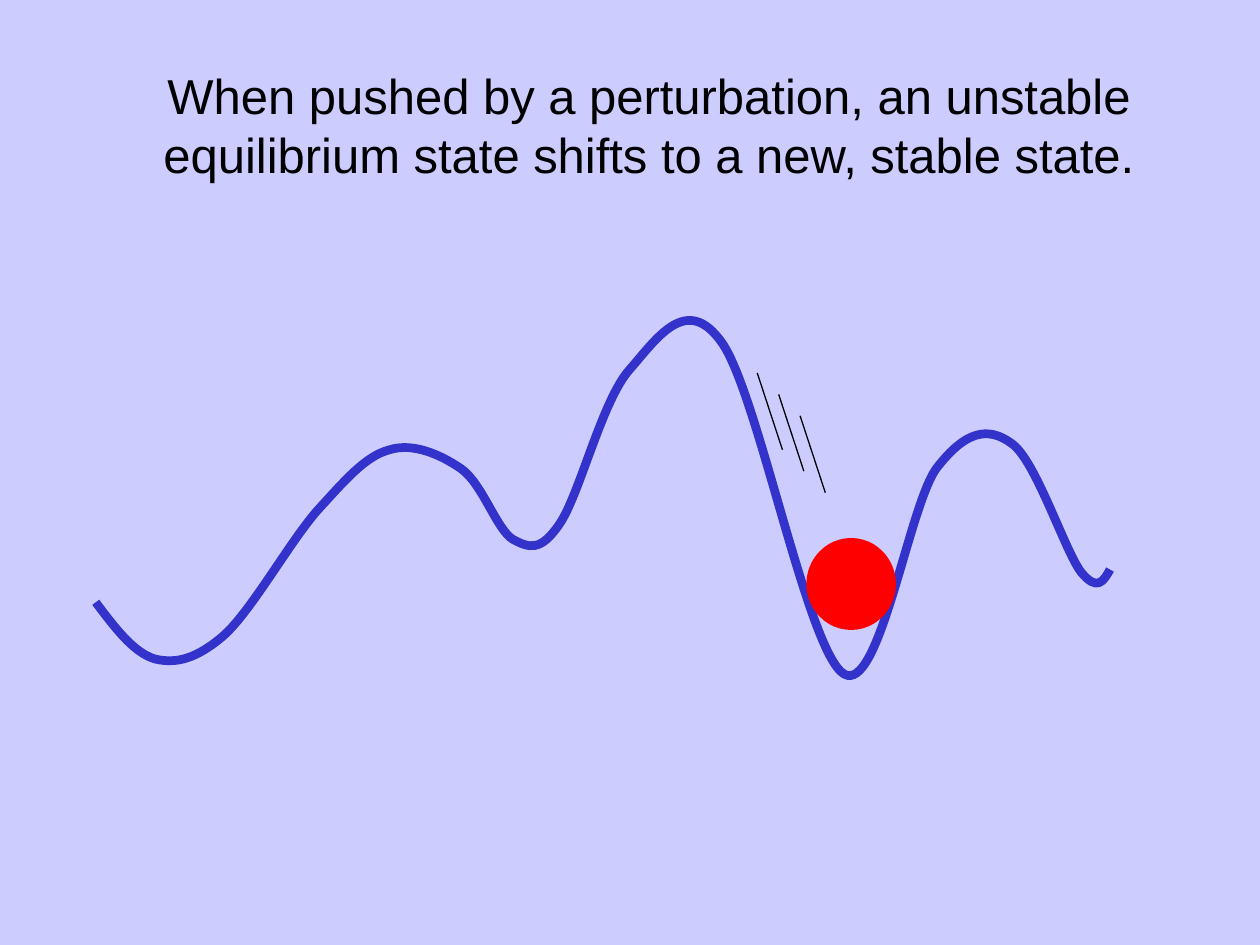
from lxml import etree
from pptx import Presentation
from pptx.dml.color import RGBColor
from pptx.enum.shapes import MSO_CONNECTOR, MSO_SHAPE
from pptx.enum.text import MSO_AUTO_SIZE, PP_ALIGN
from pptx.oxml.ns import qn
from pptx.util import Inches, Pt

STRAIGHT = MSO_CONNECTOR.STRAIGHT
OVAL = MSO_SHAPE.OVAL
CENTER = PP_ALIGN.CENTER
GROW = MSO_AUTO_SIZE.SHAPE_TO_FIT_TEXT

BACKGROUND, LANDSCAPE, BALL, INK = "CCCCFF", "3333CC", "FF0000", "000000"

# Boxes: left, top, width, height in inches
TITLE_BOX = (0.72, 0.47, 8.86, 1.03)
SCENE_BOX = (0.76, 2.32, 8.05, 3.19)

# Inches from the scene's corner: a start, then two handles and an end per segment
LANDSCAPE_START = (0, 2.46)
LANDSCAPE_SEGMENTS = [
    ((0.15, 2.66), (0.30, 2.86), (0.47, 2.91)),
    ((0.64, 2.95), (0.80, 2.91), (1.02, 2.72)),
    ((1.24, 2.52), (1.54, 1.98), (1.76, 1.73)),
    ((1.98, 1.49), (2.14, 1.30), (2.33, 1.25)),
    ((2.52, 1.19), (2.74, 1.29), (2.90, 1.40)),
    ((3.07, 1.52), (3.18, 1.88), (3.31, 1.96)),
    ((3.44, 2.03), (3.53, 2.06), (3.68, 1.84)),
    ((3.84, 1.61), (4.02, 0.85), (4.24, 0.61)),
    ((4.45, 0.37), (4.69, 0.00), (4.97, 0.40)),
    ((5.26, 0.81), (5.65, 2.86), (5.94, 3.03)),
    ((6.22, 3.19), (6.45, 1.71), (6.67, 1.40)),
    ((6.90, 1.10), (7.08, 1.06), (7.27, 1.20)),
    ((7.46, 1.33), (7.69, 2.05), (7.82, 2.22)),
    ((7.95, 2.38), (8.00, 2.29), (8.05, 2.20)),
]


def color(hex_code):
    return RGBColor.from_string(hex_code)


def add_text(slide, box, text, size, font, ink, align):
    caption = slide.shapes.add_textbox(*map(Inches, box))
    frame = caption.text_frame
    frame.word_wrap = True
    frame.auto_size = GROW
    paragraph = frame.paragraphs[0]
    paragraph.alignment = align
    run = paragraph.add_run()
    run.text = text
    run.font.size = Pt(size)
    run.font.name = font
    run.font.color.rgb = color(ink)


def add_curve(slide, start, segments, ink, weight):
    """Draw an open outline of cubic segments."""
    points = [tuple(map(Inches, point)) for segment in segments for point in segment]
    builder = slide.shapes.build_freeform(*map(Inches, start))
    builder.add_line_segments(points, close=False)
    curve = builder.convert_to_shape()
    # Each run of three straight steps becomes one cubic segment
    steps = list(curve.element.iter(qn("a:lnTo")))
    for first in range(0, len(steps), 3):
        cubic = etree.Element(qn("a:cubicBezTo"))
        steps[first].addprevious(cubic)
        for step in steps[first:first + 3]:
            cubic.append(step[0])
            step.getparent().remove(step)
    curve.shadow.inherit = False
    curve.fill.background()
    curve.line.color.rgb = color(ink)
    curve.line.width = Pt(weight)


def add_line(slide, x, y, dx, dy, ink, weight):
    line = slide.shapes.add_connector(
        STRAIGHT, Inches(x), Inches(y), Inches(x + dx), Inches(y + dy))
    line.line.color.rgb = color(ink)
    line.line.width = Pt(weight)
    etree.SubElement(line.element.spPr, qn("a:effectLst"))


def add_title(slide, box):
    add_text(slide, box,
             "When pushed by a perturbation, an unstable equilibrium state "
             "shifts to a new, stable state.",
             size=28, font="Arial", ink=INK, align=CENTER)


def add_scene(slide, box):
    """Place the landscape, the ball in its valley and its motion marks."""
    left, top = box[:2]

    def shift(point):
        return left + point[0], top + point[1]

    segments = [[shift(point) for point in segment] for segment in LANDSCAPE_SEGMENTS]
    add_curve(slide, shift(LANDSCAPE_START), segments, LANDSCAPE, 5)

    ball_x, ball_y = shift((5.64, 1.95))
    ball = slide.shapes.add_shape(
        OVAL, Inches(ball_x), Inches(ball_y), Inches(0.71), Inches(0.73))
    ball.shadow.inherit = False
    ball.fill.solid()
    ball.fill.fore_color.rgb = color(BALL)
    ball.line.fill.background()

    for mark in range(3):
        x, y = shift((5.25 + 0.17 * mark, 0.64 + 0.17 * mark))
        add_line(slide, x, y, 0.2, 0.61, INK, 0.75)


def main():
    deck = Presentation()
    deck.slide_width, deck.slide_height = Inches(10), Inches(7.5)
    slide = deck.slides.add_slide(deck.slide_layouts[6])
    slide.background.fill.solid()
    slide.background.fill.fore_color.rgb = color(BACKGROUND)
    add_scene(slide, SCENE_BOX)
    add_title(slide, TITLE_BOX)
    deck.save("out.pptx")


if __name__ == "__main__":
    main()
